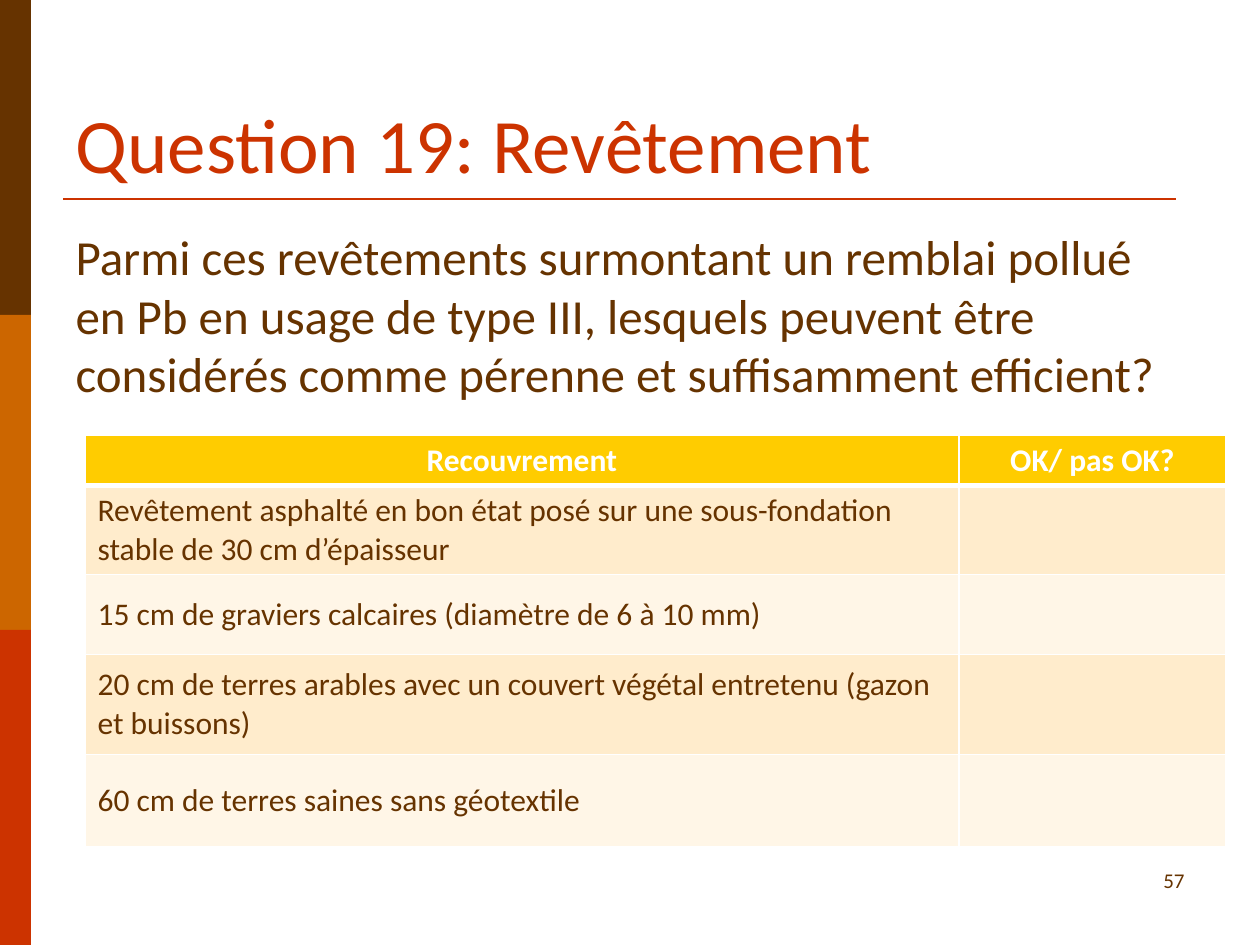
from lxml.etree import SubElement
from pptx import Presentation
from pptx.dml.color import RGBColor
from pptx.enum.shapes import MSO_CONNECTOR, MSO_SHAPE
from pptx.enum.text import MSO_ANCHOR, MSO_AUTO_SIZE, PP_ALIGN
from pptx.oxml import parse_xml
from pptx.oxml.ns import nsdecls, qn
from pptx.util import Emu, Pt

COLORS = {
    "brown": "663300", "orange": "CC6600", "red": "CC3300", "white": "FFFFFF",
    "yellow": "FFCC00", "dark band": "FFECCC", "light band": "FFF6E7",
}
PX = 914400 / 126


def px(*lengths):
    """Turn lengths in px into EMU."""
    return [Emu(round(length * PX)) for length in lengths]


def write(frame, text, size=18, color="brown", bold=False,
          align=PP_ALIGN.LEFT, anchor=MSO_ANCHOR.TOP):
    frame.word_wrap = True
    frame.vertical_anchor = anchor
    para = frame.paragraphs[0]
    para.alignment = align
    span = para.add_run()
    span.text = text
    span.font.name = "Calibri"
    span.font.size = Pt(size)
    span.font.bold = bold
    span.font.color.rgb = RGBColor.from_string(COLORS[color])
    return para


deck = Presentation()
deck.slide_width, deck.slide_height = px(1260, 945)
page = deck.slides.add_slide(deck.slide_layouts[1])

# Side stripe and title rule
for index, color in enumerate(("brown", "orange", "red")):
    band = page.shapes.add_shape(MSO_SHAPE.RECTANGLE, *px(0, 315 * index, 31, 315))
    band.shadow.inherit = False
    band.fill.solid()
    band.fill.fore_color.rgb = RGBColor.from_string(COLORS[color])
    band.line.fill.background()

rule = page.shapes.add_connector(MSO_CONNECTOR.STRAIGHT, *px(63, 199, 1176, 199))
rule.line.color.rgb = RGBColor.from_string(COLORS["red"])
rule.line.width = Pt(1.5)
SubElement(rule._element.spPr, qn("a:effectLst"))

# Title, question and page number
title, body = page.placeholders
title.left, title.top, title.width, title.height = px(63, 38, 1134, 157)
title.text_frame.auto_size = MSO_AUTO_SIZE.NONE
write(title.text_frame, "Question 19: Revêtement", size=44, color="red",
      anchor=MSO_ANCHOR.BOTTOM)

body.left, body.top, body.width, body.height = px(63, 220, 1134, 624)
body.text_frame.auto_size = MSO_AUTO_SIZE.NONE
question = write(
    body.text_frame,
    "Parmi ces revêtements surmontant un remblai pollué en Pb en usage de type III, "
    "lesquels peuvent être considérés comme pérenne et suffisamment efficient?",
    size=28)
question.space_before = Pt(5.6)
properties = question._p.get_or_add_pPr()
properties.set("marL", "0")
properties.set("indent", "0")
SubElement(properties, qn("a:buNone"))

number = page.shapes.add_textbox(*px(1067, 861, 130, 63))
write(number.text_frame, "57", size=12, align=PP_ALIGN.RIGHT)

# Table of coverings
rows = [
    ("Recouvrement", "OK/ pas OK?"),
    ("Revêtement asphalté en bon état posé sur une sous-fondation stable "
     "de 30 cm d’épaisseur", ""),
    ("15 cm de graviers calcaires (diamètre de 6 à 10 mm)", ""),
    ("20 cm de terres arables avec un couvert végétal entretenu (gazon et buissons)", ""),
    ("60 cm de terres saines sans géotextile", ""),
]
row_heights = px(50, 89, 80, 100, 92)
column_widths = px(874, 267)
table = page.shapes.add_table(len(rows), 2, *px(85, 435, 1141, 411)).table
table.horz_banding = False
for column, width in zip(table.columns, column_widths):
    column.width = width

for row_index, (texts, height) in enumerate(zip(rows, row_heights)):
    table.rows[row_index].height = height
    header = row_index == 0
    fill = "yellow" if header else ("light band", "dark band")[row_index % 2]
    thick_side = {0: "lnB", 1: "lnT"}.get(row_index)
    for column_index, text in enumerate(texts):
        cell = table.cell(row_index, column_index)
        cell.vertical_anchor = MSO_ANCHOR.MIDDLE
        if text:
            write(cell.text_frame, text, color="white" if header else "brown",
                  bold=header, align=PP_ALIGN.CENTER if header else PP_ALIGN.LEFT,
                  anchor=MSO_ANCHOR.MIDDLE)
        cell_properties = cell._tc.get_or_add_tcPr()
        for side in ("lnL", "lnR", "lnT", "lnB"):
            width = Pt(3 if side == thick_side else 1)
            cell_properties.append(parse_xml(
                f'<a:{side} {nsdecls("a")} w="{width}"><a:solidFill>'
                f'<a:srgbClr val="{COLORS["white"]}"/></a:solidFill></a:{side}>'))
        cell.fill.solid()
        cell.fill.fore_color.rgb = RGBColor.from_string(COLORS[fill])

deck.save("out.pptx")
